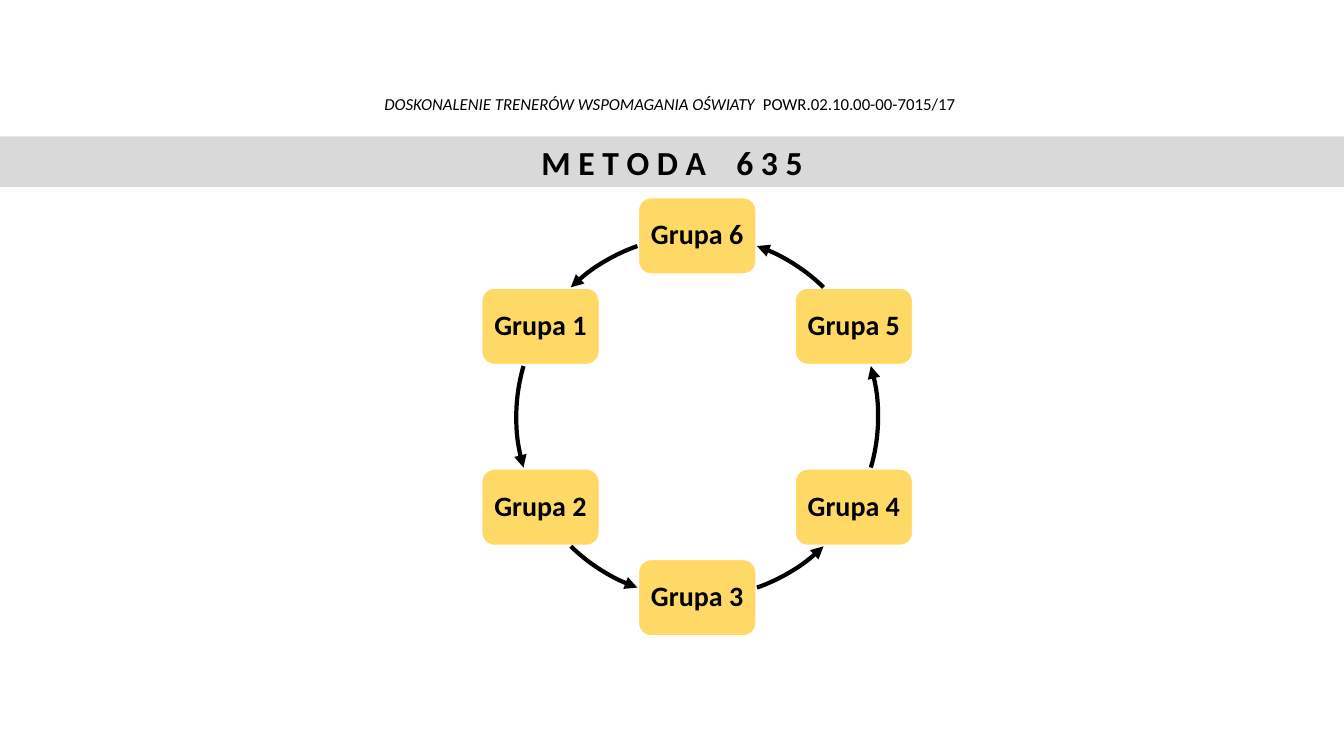
from math import cos, radians, sin

from lxml.etree import SubElement
from pptx import Presentation
from pptx.dml.color import RGBColor
from pptx.enum.shapes import MSO_SHAPE
from pptx.enum.text import MSO_ANCHOR, PP_ALIGN
from pptx.oxml.ns import qn
from pptx.util import Emu, Pt

# Slide on a grid of 160 columns by 90 rows
deck = Presentation()
deck.slide_width, deck.slide_height = Emu(12192000), Emu(6858000)
slide = deck.slides.add_slide(deck.slide_layouts[6])
cell = deck.slide_width / 160


def paint(part, tone):
    if hasattr(part, "solid"):
        part.solid()
        part = part.fore_color
    part.rgb = RGBColor.from_string(tone)


def add(kind, left, top, wide, high, fill=None, runs=(), line=1.0):
    """Add a shape; each run is (text, font values, letter gap in points)."""
    shape = slide.shapes.add_shape(
        kind, *[Emu(round(n * cell)) for n in (left, top, wide, high)])
    shape.shadow.inherit = False
    shape.line.fill.background()
    if fill:
        paint(shape.fill, fill)
    else:
        shape.fill.background()
    frame = shape.text_frame
    frame.word_wrap = True
    frame.vertical_anchor = MSO_ANCHOR.MIDDLE
    frame.margin_left = frame.margin_right = Emu(round(cell))
    para = frame.paragraphs[0]
    para.alignment, para.line_spacing = PP_ALIGN.CENTER, line
    for text, style, gap in runs:
        run = para.add_run()
        run.text = text
        for key, value in {"name": "Calibri", **style}.items():
            setattr(run.font, key, value)
        paint(run.font.color, "000000")
        if gap:
            run.font._element.set("spc", str(round(gap * 100)))
    return shape


# Project line above the band
small = {"size": Pt(12)}
add(MSO_SHAPE.RECTANGLE, 11, 10.5, 137.5, 4, runs=[
    ("DOSKONALENIE TRENERÓW WSPOMAGANIA OŚWIATY", {**small, "italic": True}, 0),
    (" ", small, 2.7),
    ("POWR.02.10.00-00-7015/17", small, 0)], line=0.9)

# Title band
head = {"size": Pt(24), "bold": True}
add(MSO_SHAPE.RECTANGLE, 0, 16.25, 160, 6, "D9D9D9", [
    ("M E T O D A", head, 0), (" ", head, 16.3), ("6 3 5", head, 0)])

# Ring of six groups, running clockwise from the top
mid_x, mid_y, ring = 83, 49.62, 21.54
wide, high = 14, 9.1
label = {"size": Pt(20), "bold": True}
for step in range(6):
    turn = radians(60 * step - 90)
    box = add(MSO_SHAPE.ROUNDED_RECTANGLE,
              mid_x + ring * cos(turn) - wide / 2,
              mid_y + ring * sin(turn) - high / 2,
              wide, high, "FFD966", [(f"Grupa {6 - step}", label, 0)], 0.9)
    paint(box.line.fill, "FFFFFF")
    box.line.width = Pt(1)

# Arrows along the ring, in degrees clockwise from the top
spans = [(19.3, 44.3), (73.7, 106.3), (135.7, 160.7)]
for half in (0, 180):
    for span in spans:
        arc = add(MSO_SHAPE.ARC, mid_x - ring, mid_y - ring, 2 * ring, 2 * ring)
        for spot, angle in enumerate(span):
            arc.adjustments[spot] = (angle + half - 90) % 360 * 0.6
        paint(arc.line.fill, "000000")
        arc.line.width = Pt(3)
        SubElement(arc.line._get_or_add_ln(), qn("a:headEnd"), type="triangle")

deck.save("out.pptx")
